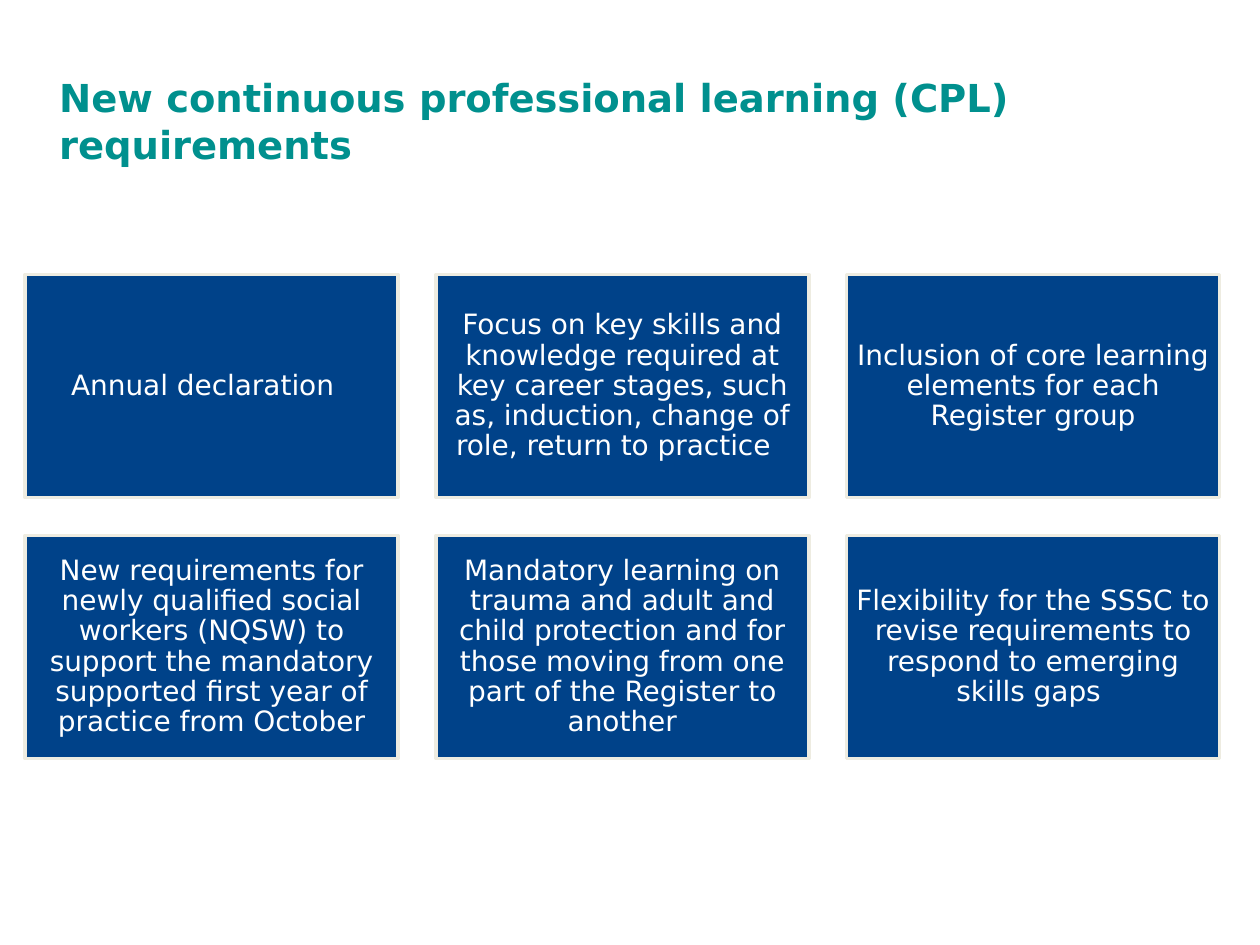
"""Build a slide of the new continuous professional learning requirements."""
from dataclasses import dataclass

from pptx import Presentation
from pptx.dml.color import RGBColor
from pptx.enum.shapes import MSO_SHAPE as Shape
from pptx.enum.text import MSO_ANCHOR as Anchor, MSO_AUTO_SIZE as AutoSize, PP_ALIGN as Align
from pptx.util import Inches, Pt

TITLE = "New continuous professional learning (CPL) requirements"
REQUIREMENTS = [
    "Annual declaration  ",
    "Focus on key skills and knowledge required at key career stages, "
    "such as, induction, change of role, return to practice  ",
    "Inclusion of core learning elements for each Register group",
    "New requirements for newly qualified social workers (NQSW) to support "
    "the mandatory supported first year of practice from October",
    "Mandatory learning on trauma and adult and child protection and for "
    "those moving from one part of the Register to another",
    "Flexibility for the SSSC to revise requirements to respond to emerging skills gaps ",
]


@dataclass(frozen=True)
class Theme:
    font: str = "DejaVu Sans"
    teal: str = "00908E"
    blue: str = "004289"
    cream: str = "EEECE1"
    white: str = "FFFFFF"
    title_size: int = 22
    card_size: int = 16
    border: int = 2


THEME = Theme()
COLUMNS = 3
GRID_LEFT, GRID_TOP = 0.2, 2.18
CARD_WIDTH, CARD_HEIGHT = 2.96, 1.77
GAP = 0.3
CARD_INSET = 0.07


def write_text(shape, text, *, size, color, bold=False, align=Align.LEFT,
               anchor=Anchor.TOP, line_spacing=1.0, inset=None):
    frame = shape.text_frame
    frame.word_wrap = True
    frame.auto_size = AutoSize.NONE
    frame.vertical_anchor = anchor
    if inset is not None:
        frame.margin_left = frame.margin_right = Inches(inset)
        frame.margin_top = frame.margin_bottom = Inches(inset)
    paragraph = frame.paragraphs[0]
    paragraph.alignment = align
    paragraph.line_spacing = line_spacing
    paragraph.space_before = Pt(0)
    run = paragraph.add_run()
    run.text = text
    run.font.name = THEME.font
    run.font.size = Pt(size)
    run.font.bold = bold
    run.font.color.rgb = RGBColor.from_string(color)


def add_title(slide):
    title = slide.shapes.title
    title.left, title.top = Inches(0.37), Inches(0.54)
    title.width, title.height = Inches(8.9), Inches(0.84)
    write_text(title, TITLE, size=THEME.title_size, color=THEME.teal, bold=True)


def add_card(slide, index, text):
    row, column = divmod(index, COLUMNS)
    left = GRID_LEFT + column * (CARD_WIDTH + GAP)
    top = GRID_TOP + row * (CARD_HEIGHT + GAP)
    card = slide.shapes.add_shape(Shape.RECTANGLE, Inches(left), Inches(top),
                                  Inches(CARD_WIDTH), Inches(CARD_HEIGHT))
    card.shadow.inherit = False
    card.fill.solid()
    card.fill.fore_color.rgb = RGBColor.from_string(THEME.blue)
    card.line.color.rgb = RGBColor.from_string(THEME.cream)
    card.line.width = Pt(THEME.border)
    write_text(card, text, size=THEME.card_size, color=THEME.white, align=Align.CENTER,
               anchor=Anchor.MIDDLE, line_spacing=0.9, inset=CARD_INSET)


def main():
    presentation = Presentation()
    presentation.slide_width, presentation.slide_height = Inches(10), Inches(7.5)
    slide = presentation.slides.add_slide(presentation.slide_layouts[5])
    add_title(slide)
    for index, text in enumerate(REQUIREMENTS):
        add_card(slide, index, text)
    presentation.save("out.pptx")


if __name__ == "__main__":
    main()
